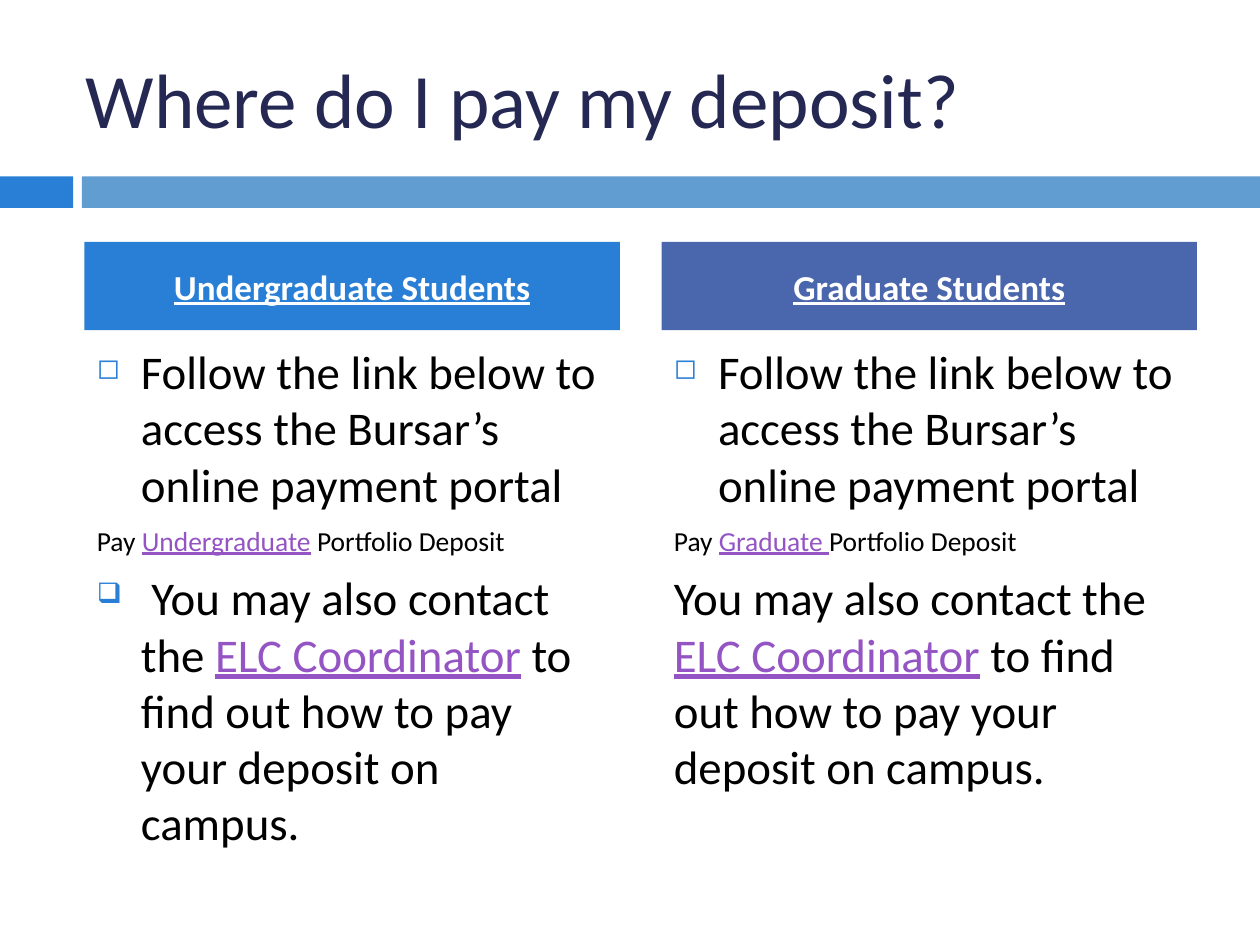
"""Build the deposit payment slide with two student columns."""
from lxml.etree import SubElement as Sub
from pptx import Presentation
from pptx.dml.color import RGBColor as RGB
from pptx.enum.shapes import MSO_SHAPE as Shape
from pptx.enum.text import MSO_ANCHOR as Anchor, PP_ALIGN as Align
from pptx.oxml.ns import qn
from pptx.util import Inches, Pt

NAVY = RGB(0x24, 0x28, 0x52)
BLUE = RGB(0x29, 0x7F, 0xD5)
SKY = RGB(0x62, 0x9D, 0xD1)
INDIGO = RGB(0x4A, 0x66, 0xAC)
VIOLET = RGB(0x94, 0x54, 0xC3)
BLACK = RGB(0, 0, 0)
WHITE = RGB(255, 255, 255)

WIDE, HIGH = 10, 7.5
LEFT, COL, GAP = 0.67, 4.25, 0.33
BIG, SMALL = 26.8, 15.7
LINK = {"color": VIOLET, "underline": True}
HEAD = {"size": 20, "color": WHITE, "bold": True, "underline": True}

TITLE = "Where do I pay my deposit?"
FOLLOW = ("◻", BIG, [("Follow the link below to access the Bursar’s online payment portal", {})])
ASK = [("ELC Coordinator", LINK),
       (" to find out how to pay your deposit on campus.", {})]
COLUMNS = [
    ("Undergraduate Students", BLUE, [
        FOLLOW,
        ("", SMALL, [("Pay ", {}), ("Undergraduate", LINK), (" Portfolio Deposit", {})]),
        ("❑", BIG, [(" You may also contact the ", {})] + ASK),
    ]),
    ("Graduate Students", INDIGO, [
        FOLLOW,
        ("", SMALL, [("Pay ", {}), ("Graduate ", LINK), ("Portfolio Deposit", {})]),
        ("", BIG, [("You may also contact the ", {})] + ASK),
    ]),
]
BARS = [(0, 0.58, BLUE), (0.65, WIDE - 0.65, SKY)]


def write(para, text, size, color=BLACK, **style):
    run = para.add_run()
    run.text = text
    run.font.color.rgb = color
    for key, val in {"name": "Calibri", "size": Pt(size), **style}.items():
        setattr(run.font, key, val)


def block(slide, box, fill):
    rect = slide.shapes.add_shape(Shape.RECTANGLE, *map(Inches, box))
    rect.shadow.inherit = False
    rect.fill.solid()
    rect.fill.fore_color.rgb = fill
    rect.line.fill.background()
    return rect


def bullet(para, mark):
    props = para._p.get_or_add_pPr()
    props.set("marL", str(Inches(0.35)))
    props.set("indent", str(Inches(-0.35)))
    tint = Sub(props, qn("a:buClr"))
    Sub(tint, qn("a:srgbClr")).set("val", str(BLUE))
    Sub(props, qn("a:buSzPct")).set("val", "60000")
    Sub(props, qn("a:buChar")).set("char", mark)


def column(slide, left, name, fill, items):
    body = slide.shapes.add_textbox(*map(Inches, (left, 2.67, COL, 3.92)))
    frame = body.text_frame
    frame.word_wrap = True
    for num, (mark, size, runs) in enumerate(items):
        para = frame.add_paragraph() if num else frame.paragraphs[0]
        para.space_before = Pt(7)
        if mark:
            bullet(para, mark)
        for text, style in runs:
            write(para, text, size, **style)

    head = block(slide, (left, 1.92, COL, 0.7), fill).text_frame
    head.vertical_anchor = Anchor.MIDDLE
    para = head.paragraphs[0]
    para.alignment = Align.CENTER
    para.space_before = Pt(7)
    write(para, name, **HEAD)


def main():
    deck = Presentation()
    deck.slide_width, deck.slide_height = Inches(WIDE), Inches(HIGH)
    slide = deck.slides.add_slide(deck.slide_layouts[5])
    for left, width, fill in BARS:
        block(slide, (left, 1.4, width, 0.25), fill)

    title = slide.shapes.title
    box = map(Inches, (0.58, 0.3, 8.92, 0.95))
    for key, val in zip(("left", "top", "width", "height"), box):
        setattr(title, key, val)
    title.text_frame.vertical_anchor = Anchor.MIDDLE
    para = title.text_frame.paragraphs[0]
    para.alignment = Align.LEFT
    write(para, TITLE, 44, NAVY)

    for num, (name, fill, items) in enumerate(COLUMNS):
        column(slide, LEFT + num * (COL + GAP), name, fill, items)
    deck.save("out.pptx")


if __name__ == "__main__":
    main()
